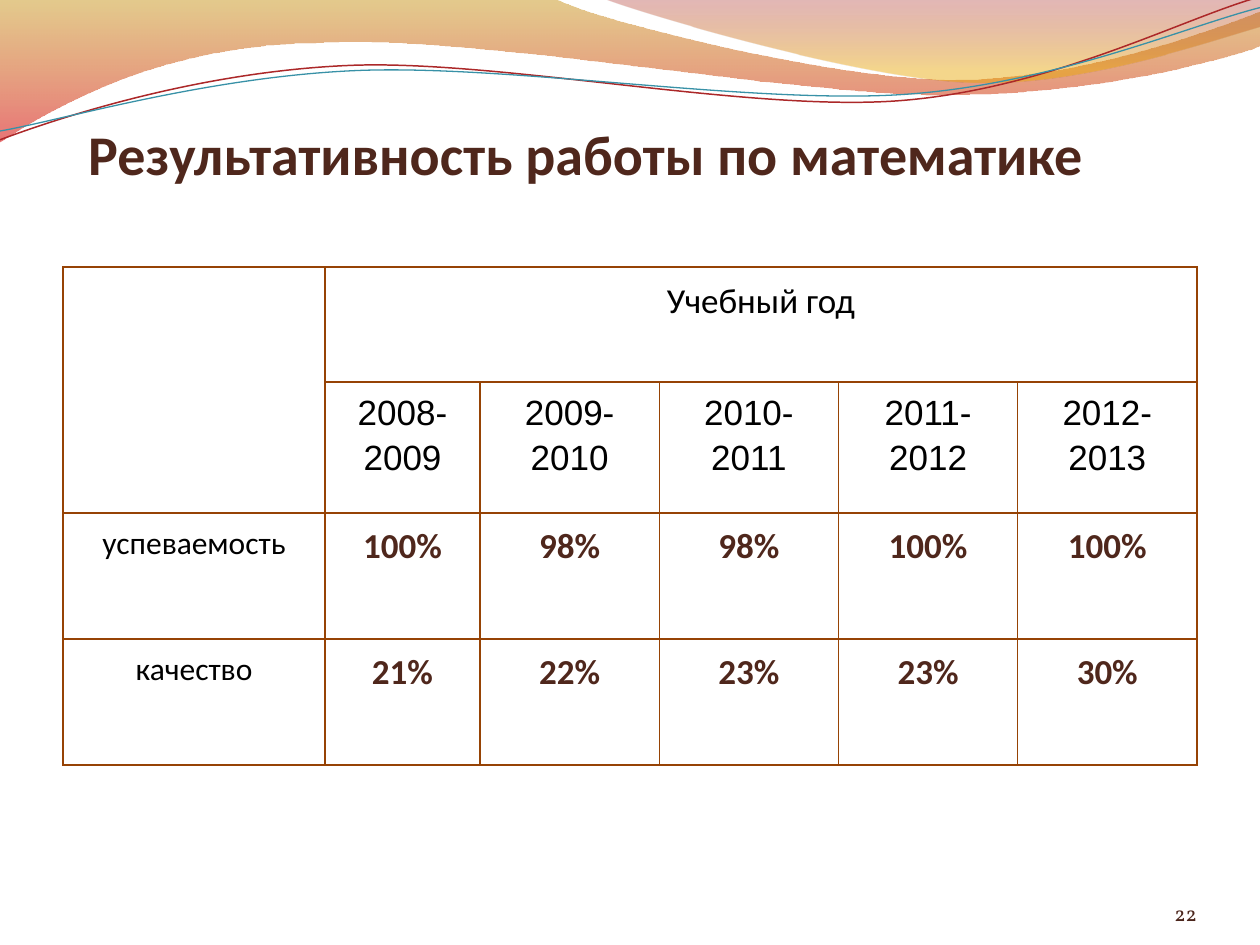
from math import cos, radians, sin

from lxml import etree
from pptx import Presentation
from pptx.dml.color import RGBColor
from pptx.enum.text import MSO_ANCHOR, PP_ALIGN
from pptx.oxml.ns import qn
from pptx.util import Inches, Pt

BOTTOM = MSO_ANCHOR.BOTTOM
LEFT, CENTER, RIGHT = PP_ALIGN.LEFT, PP_ALIGN.CENTER, PP_ALIGN.RIGHT

BLACK = RGBColor(0x00, 0x00, 0x00)
BROWN = RGBColor(0x4F, 0x27, 0x1C)
NUMBER_BROWN = RGBColor(0x4B, 0x25, 0x1B)
BORDER = RGBColor(0x96, 0x43, 0x05)
OCHRE = RGBColor(0xC3, 0x8B, 0x00)
RED = RGBColor(0xD6, 0x03, 0x05)
CRIMSON = RGBColor(0xA1, 0x11, 0x12)
AMBER = RGBColor(0xE9, 0xA6, 0x00)
WAVE_RED = RGBColor(0xAC, 0x28, 0x29)
WAVE_TEAL = RGBColor(0x38, 0x91, 0xA7)

COLUMNS = 10
WAVE_TILT = -2.7


class Deck:
    font = "Calibri"

    def __init__(self):
        self.prs = Presentation()
        self.prs.slide_width, self.prs.slide_height = Inches(10), Inches(7.5)
        self.s = self.prs.slides.add_slide(self.prs.slide_layouts[6])

    def grid(self, *cells):
        return [round(c * self.prs.slide_width / COLUMNS) for c in cells]

    def style(self, p, size, color, bold=False, font=None, align=LEFT):
        p.alignment = align
        for r in p.runs:
            r.font.name = font or self.font
            r.font.size = Pt(size)
            r.font.bold = bold
            r.font.color.rgb = color

    def freeform(self, box, segments, closed, tilt=0):
        left, top, width, height = box
        mid_x, mid_y = left + width / 2, top + height / 2
        turn_cos, turn_sin = cos(radians(-tilt)), sin(radians(-tilt))

        def local(x, y):
            dx, dy = x - mid_x, y - mid_y
            return self.grid(dx * turn_cos - dy * turn_sin + width / 2,
                             dx * turn_sin + dy * turn_cos + height / 2)

        routes = [[local(*seg[i:i + 2]) for i in range(0, len(seg), 2)] for seg in segments]
        builder = self.s.shapes.build_freeform(*routes[0][-1])
        builder.add_line_segments([route[-1] for route in routes[1:]], close=closed)
        sp = builder.convert_to_shape()
        sp.left, sp.top, sp.width, sp.height = self.grid(*box)
        sp.rotation = tilt
        sp.shadow.inherit = False
        outline = next(sp.element.iter(qn("a:path")))
        outline.set("w", str(sp.width))
        outline.set("h", str(sp.height))
        for step, route in zip(list(outline), routes):
            for pt in list(step):
                step.remove(pt)
            if len(route) == 3:
                curve = etree.Element(qn("a:cubicBezTo"))
                outline.replace(step, curve)
                step = curve
            for x, y in route:
                etree.SubElement(step, qn("a:pt"), x=str(x), y=str(y))
        return sp

    def band(self, box, segments, stops):
        sp = self.freeform(box, segments, True)
        sp.line.fill.background()
        sp.fill.gradient()
        sp.fill.gradient_angle = 270
        for stop, (position, color, _) in zip(sp.fill.gradient_stops, stops):
            stop.position = position
            stop.color.rgb = color
        for clr, (_, _, opacity) in zip(sp.element.iter(qn("a:srgbClr")), stops):
            etree.SubElement(clr, qn("a:alpha")).set("val", str(opacity * 1000))

    def wave(self, box, segments, color, width):
        sp = self.freeform(box, segments, False, WAVE_TILT)
        sp.fill.background()
        sp.line.color.rgb = color
        sp.line.width = Pt(width)

    def text(self, box, text, size, color, top=0, **style):
        tf = self.s.shapes.add_textbox(*self.grid(*box)).text_frame
        tf.word_wrap = True
        tf.vertical_anchor = BOTTOM
        tf.margin_left = tf.margin_right = tf.margin_bottom = 0
        tf.margin_top = Inches(top)
        tf.text = text
        self.style(tf.paragraphs[0], size, color, **style)

    def cell_border(self, cell):
        tcPr = cell._tc.get_or_add_tcPr()
        for side in ("lnL", "lnR", "lnT", "lnB"):
            ln = etree.SubElement(tcPr, qn("a:" + side), w=str(Pt(1)))
            fill = etree.SubElement(ln, qn("a:solidFill"))
            etree.SubElement(fill, qn("a:srgbClr"), val=str(BORDER))

    def table(self, left, top, widths, heights, rows, look):
        box = self.grid(left, top, sum(widths), sum(heights))
        table = self.s.shapes.add_table(len(heights), len(widths), *box).table
        table.first_row = table.horz_banding = False
        for col, width in zip(table.columns, self.grid(*widths)):
            col.width = width
        for row, height in zip(table.rows, self.grid(*heights)):
            row.height = height
        for i, values in enumerate(rows):
            for j, value in enumerate(values):
                cell = table.cell(i, j)
                self.cell_border(cell)
                cell.fill.background()
                if not value:
                    continue
                cell.text_frame.text = value
                for p in cell.text_frame.paragraphs:
                    p.line_spacing = 1.15
                    self.style(p, align=CENTER, **look(i, j))
        return table


def results_look(row, col):
    if row < 2:
        return dict(size=20, color=BLACK, font="Arial" if row else None)
    if col == 0:
        return dict(size=18, color=BLACK)
    return dict(size=20, color=BROWN, bold=True)


def main():
    deck = Deck()
    deck.band((-0.01, -0.01, 10.02, 1.14),
              [(0, -0.01), (4.4, -0.01),
               (4.76, 0.17, 6.64, 0.63, 7.58, 0.63),
               (8.53, 0.63, 9.58, 0.26, 10, 0.09), (10.01, 0.36),
               (9.83, 0.44, 8.7, 0.76, 7.46, 0.75),
               (6.22, 0.75, 3.82, 0.28, 2.57, 0.34),
               (1.29, 0.35, 0.46, 0.83, -0.01, 1.13), (0, -0.01)],
              [(0, OCHRE, 45), (1, RED, 55)])
    deck.band((4.79, -0.01, 5.21, 0.7),
              [(4.79, -0.01),
               (5.09, 0.11, 6.82, 0.62, 7.69, 0.65),
               (8.56, 0.69, 9.61, 0.32, 10, 0.21), (10, 0), (4.79, -0.01)],
              [(0, CRIMSON, 30), (0.8, AMBER, 45)])
    deck.wave((-0.02, 0.22, 10.02, 0.71),
              [(0, 1.11),
               (0.48, 0.93, 1.58, 0.57, 2.77, 0.52),
               (3.95, 0.47, 5.93, 0.89, 7.13, 0.8),
               (8.33, 0.71, 9.38, 0.15, 9.98, -0.02)], WAVE_RED, 0.85)
    deck.wave((-0.02, 0.3, 10.03, 0.58),
              [(0, 1.04),
               (0.47, 0.96, 1.64, 0.61, 2.83, 0.56),
               (4.03, 0.51, 5.97, 0.83, 7.17, 0.75),
               (8.36, 0.67, 9.41, 0.21, 10, 0.06)], WAVE_TEAL, 0.75)

    deck.text((0.7, 0.23, 9, 1.25), "Результативность работы по математике",
              32, BROWN, top=0.05, bold=True)

    rows = [
        ["", "Учебный год", "", "", "", ""],
        ["", "2008-\n2009", "2009-2010", "2010-2011", "2011-2012", "2012-2013"],
        ["успеваемость", "100%", "98%", "98%", "100%", "100%"],
        ["качество", "21%", "22%", "23%", "23%", "30%"],
    ]
    label_width, first_width = 2.08, 1.23
    year_width = (9 - label_width - first_width) / 4
    table = deck.table(0.5, 2.12, [label_width, first_width] + [year_width] * 4,
                       [0.91, 1.04, 1, 1], rows, results_look)
    table.cell(0, 0).merge(table.cell(1, 0))
    table.cell(0, 1).merge(table.cell(0, 5))

    deck.text((8.67, 6.95, 0.83, 0.4), "22", 12, NUMBER_BROWN,
              font="Vollkorn", align=RIGHT)
    deck.prs.save("out.pptx")


if __name__ == "__main__":
    main()
